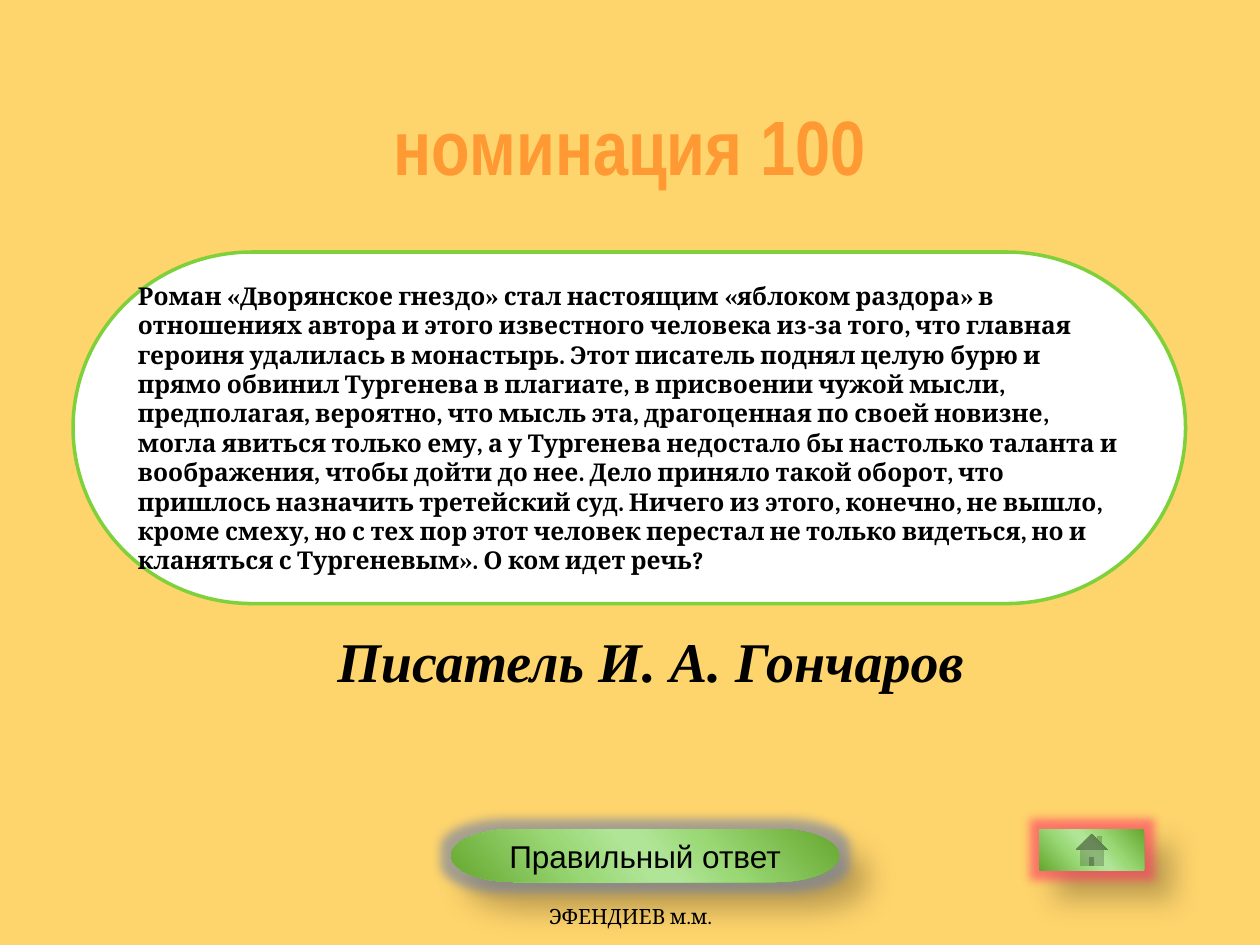
from pptx import Presentation
from pptx.dml.color import RGBColor
from pptx.enum.shapes import MSO_SHAPE as Shape
from pptx.enum.text import MSO_ANCHOR as Anchor, PP_ALIGN as Align
from pptx.oxml import parse_xml
from pptx.oxml.ns import nsdecls, qn
from pptx.util import Inches, Pt

SAND = RGBColor(0xFE, 0xD4, 0x6C)
ORANGE = RGBColor(0xFF, 0x99, 0x33)
LIME = RGBColor(0x7F, 0xD1, 0x3B)
WHITE = RGBColor(0xFF, 0xFF, 0xFF)
BLACK = RGBColor(0, 0, 0)
GLOW_RED = RGBColor(0xFF, 0x38, 0x68)
GLOW_GREY = RGBColor(0x70, 0x80, 0xA8)
BUTTON_STOPS = [(0, "66A72F"), (33, "99D874"), (47, "B0E496"),
                (53, "B0E496"), (68, "9AD876"), (100, "66A72F")]

QUESTION = (
    "Роман «Дворянское гнездо» стал настоящим «яблоком раздора» в отношениях "
    "автора и этого известного человека из-за того, что главная героиня "
    "удалилась в монастырь. Этот писатель поднял целую бурю и прямо обвинил "
    "Тургенева в плагиате, в присвоении чужой мысли, предполагая, вероятно, "
    "что мысль эта, драгоценная по своей новизне, могла явиться только ему, "
    "а у Тургенева недостало бы настолько таланта и воображения, чтобы дойти "
    "до нее. Дело приняло такой оборот, что пришлось назначить третейский суд. "
    "Ничего из этого, конечно, не вышло, кроме смеху, но с тех пор этот человек "
    "перестал не только видеться, но и кланяться с Тургеневым». О ком идет речь?"
)


def write(sp, text, font, size, color=BLACK, bold=False, italic=False,
          align=Align.CENTER, anchor=Anchor.MIDDLE):
    tf = sp.text_frame
    tf.word_wrap = True
    tf.vertical_anchor = anchor
    p = tf.paragraphs[0]
    p.alignment = align
    r = p.add_run()
    r.text = text
    r.font.name = font
    r.font.size = Pt(size)
    r.font.bold = bold
    r.font.italic = italic
    r.font.color.rgb = color


def add_label(s, box, text, font, size, **style):
    sp = s.shapes.add_textbox(*map(Inches, box))
    write(sp, text, font, size, **style)


def add_panel(s, box, kind):
    sp = s.shapes.add_shape(kind, *map(Inches, box))
    sp.shadow.inherit = False
    return sp


def add_question(s, box, text):
    sp = add_panel(s, box, Shape.FLOWCHART_TERMINATOR)
    sp.fill.solid()
    sp.fill.fore_color.rgb = WHITE
    sp.line.color.rgb = LIME
    sp.line.width = Pt(2)
    write(sp, text, "Cambria", 14, bold=True, align=Align.LEFT)


def add_button(s, box, kind, glow):
    sp = add_panel(s, box, kind)
    sp.line.fill.background()
    stops = "".join(
        f'<a:gs pos="{pos * 1000}"><a:srgbClr val="{color}"/></a:gs>'
        for pos, color in BUTTON_STOPS)
    spPr = sp._element.spPr
    spPr.find(qn("a:prstGeom")).addnext(parse_xml(
        f'<a:gradFill {nsdecls("a")} rotWithShape="1"><a:gsLst>{stops}</a:gsLst>'
        f'<a:lin ang="{139 * 60000}" scaled="0"/></a:gradFill>'))
    effects = spPr.find(qn("a:effectLst"))
    effects.append(parse_xml(
        f'<a:glow {nsdecls("a")} rad="{Pt(11)}"><a:srgbClr val="{glow}">'
        '<a:alpha val="60000"/></a:srgbClr></a:glow>'))
    effects.append(parse_xml(
        f'<a:outerShdw {nsdecls("a")} blurRad="{Pt(15)}" dist="{Pt(18)}" '
        f'dir="{45 * 60000}" algn="ctr" rotWithShape="0"><a:srgbClr val="{BLACK}">'
        '<a:alpha val="26000"/></a:srgbClr></a:outerShdw>'))
    return sp


def main():
    prs = Presentation()
    prs.slide_width, prs.slide_height = Inches(10), Inches(7.5)
    s = prs.slides.add_slide(prs.slide_layouts[6])
    s.background.fill.solid()
    s.background.fill.fore_color.rgb = SAND

    add_label(s, (1.75, 4.92, 6.83, 0.64), "Писатель И. А. Гончаров",
              "Times New Roman", 32, bold=True, italic=True, anchor=Anchor.TOP)
    add_question(s, (0.58, 2, 8.83, 2.79), QUESTION)
    add_label(s, (2.5, 0.8, 5, 0.7), "номинация 100", "Arial Narrow", 44,
              color=ORANGE, bold=True)
    add_button(s, (8.25, 6.58, 0.83, 0.33), Shape.ACTION_BUTTON_HOME, GLOW_RED)
    answer = add_button(s, (3.58, 6.58, 3.08, 0.42),
                        Shape.FLOWCHART_TERMINATOR, GLOW_GREY)
    write(answer, "Правильный ответ", "Arial", 18)
    add_label(s, (3.42, 7.02, 3.17, 0.4), "ЭФЕНДИЕВ м.м.", "Cambria", 12,
              anchor=Anchor.BOTTOM)
    prs.save("out.pptx")


if __name__ == "__main__":
    main()
